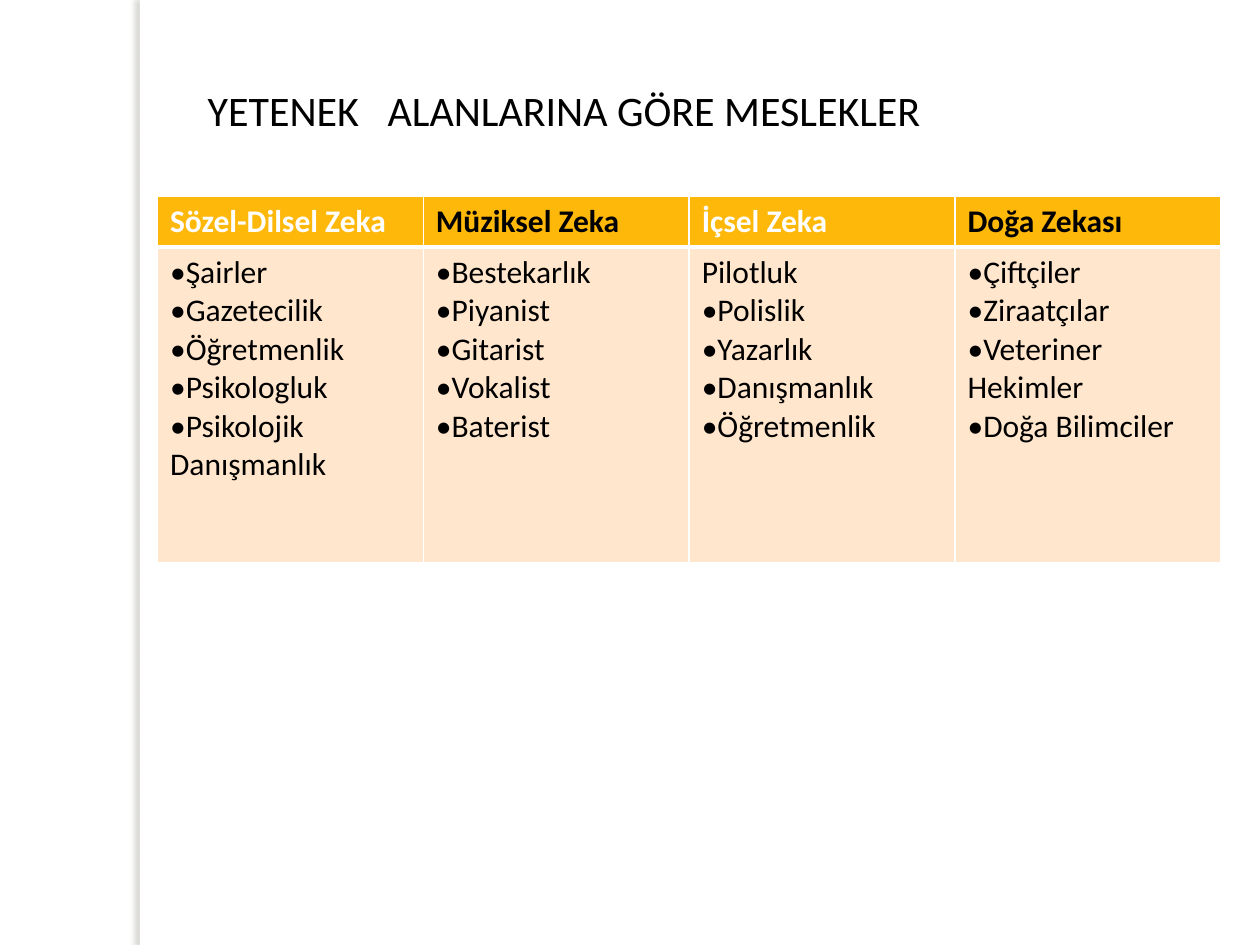
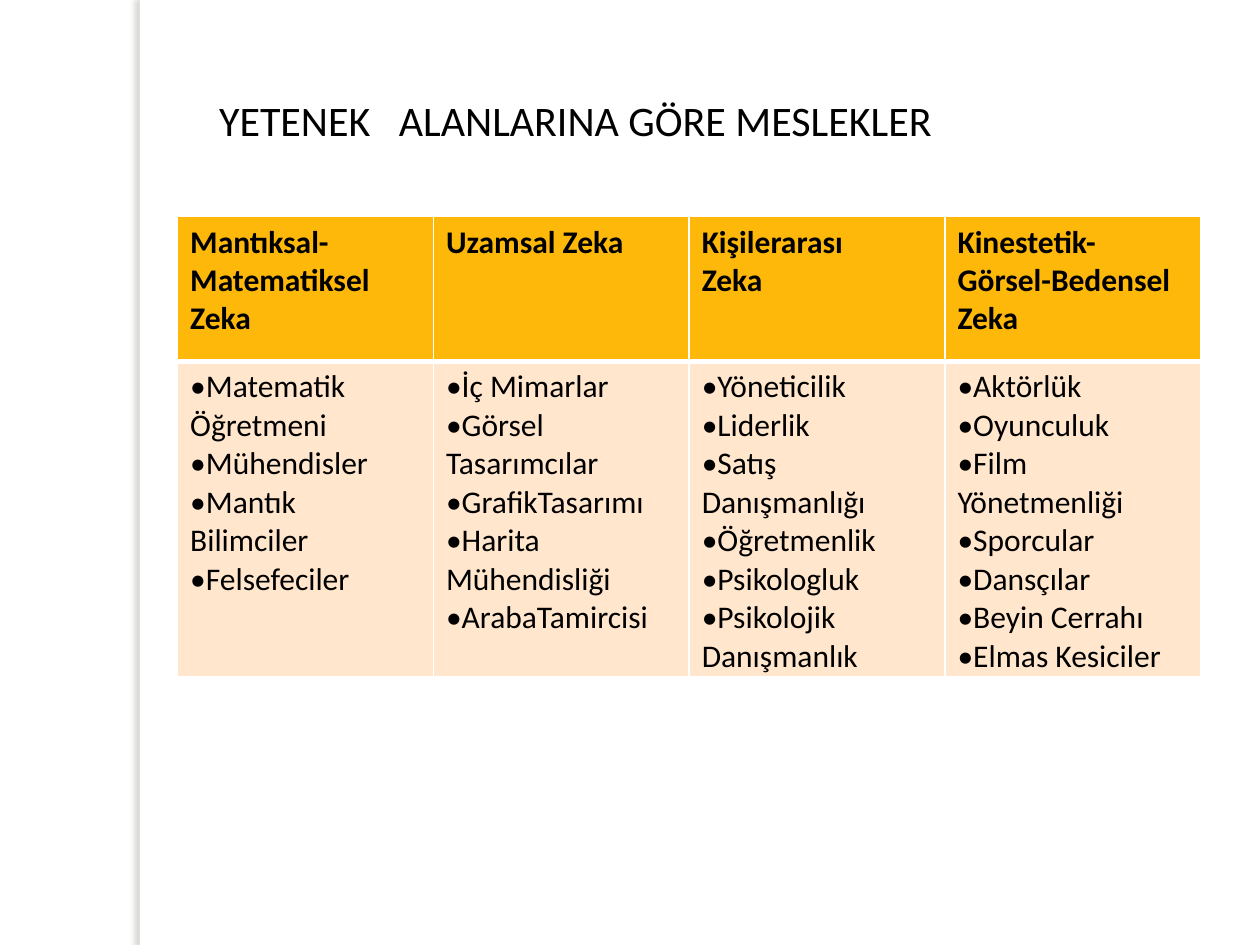
from dataclasses import dataclass

from lxml import etree
from pptx import Presentation
from pptx.dml.color import RGBColor
from pptx.enum.shapes import MSO_SHAPE
from pptx.oxml.ns import qn
from pptx.util import Inches, Pt

RECTANGLE = MSO_SHAPE.RECTANGLE


@dataclass(frozen=True)
class Theme:
    font: str = "Calibri"
    title_size: int = 24
    table_size: int = 18
    title_gap: float = 10.85
    black: str = "000000"
    white: str = "FFFFFF"
    header: str = "FEB80A"
    body: str = "FFE6CC"
    shadow: str = "736F63"
    thin: int = 1
    thick: int = 3


THEME = Theme()
TITLE_START, TITLE_END = "YETENEK", "ALANLARINA GÖRE MESLEKLER"

PAGES = [
    {
        "title_at": (1.55, 0.62, 7.31, 0.5),
        "table_at": (1.25, 1.56),
        "column_width": 2.11,
        "row_heights": (0.38, 2.51),
        "columns": [
            (["Sözel-Dilsel Zeka"], THEME.white,
             ["•Şairler", "•Gazetecilik", "•Öğretmenlik", "•Psikologluk",
              "•Psikolojik Danışmanlık"]),
            (["Müziksel Zeka"], THEME.black,
             ["•Bestekarlık", "•Piyanist", "•Gitarist", "•Vokalist", "•Baterist"]),
            (["İçsel Zeka"], THEME.white,
             ["Pilotluk", "•Polislik", "•Yazarlık", "•Danışmanlık", "•Öğretmenlik"]),
            (["Doğa Zekası"], THEME.black,
             ["•Çiftçiler", "•Ziraatçılar", "•Veteriner Hekimler",
              "•Doğa Bilimciler"]),
        ],
    },
    {
        "title_at": (1.64, 0.7, 7.31, 0.5),
        "table_at": (1.41, 1.72),
        "column_width": 2.03,
        "row_heights": (1.15, 2.5),
        "columns": [
            (["Mantıksal-Matematiksel Zeka"], THEME.black,
             ["•Matematik Öğretmeni", "•Mühendisler", "•Mantık Bilimciler",
              "•Felsefeciler"]),
            (["Uzamsal Zeka"], THEME.black,
             ["•İç Mimarlar", "•Görsel Tasarımcılar", "•GrafikTasarımı",
              "•Harita Mühendisliği", "•ArabaTamircisi"]),
            (["Kişilerarası", "Zeka"], THEME.black,
             ["•Yöneticilik", "•Liderlik", "•Satış Danışmanlığı", "•Öğretmenlik",
              "•Psikologluk", "•Psikolojik Danışmanlık"]),
            (["Kinestetik-Görsel-Bedensel Zeka"], THEME.black,
             ["•Aktörlük", "•Oyunculuk", "•Film Yönetmenliği", "•Sporcular",
              "•Dansçılar", "•Beyin Cerrahı", "•Elmas Kesiciler"]),
        ],
    },
]


def paint(fill, color):
    fill.solid()
    fill.fore_color.rgb = RGBColor.from_string(color)


def add_span(para, text, size, color, bold=False):
    span = para.add_run()
    span.text = text
    for name, value in {"name": THEME.font, "size": Pt(size), "bold": bold}.items():
        setattr(span.font, name, value)
    span.font.color.rgb = RGBColor.from_string(color)
    return span


def add_side_band(page):
    band = page.shapes.add_shape(
        RECTANGLE, Inches(1.11), 0, Inches(0.08), Inches(7.5))
    paint(band.fill, THEME.white)
    band.line.fill.background()
    band.shadow.inherit = False
    effects = band._element.spPr.find(qn("a:effectLst"))
    shadow = etree.SubElement(
        effects, qn("a:outerShdw"), blurRad=str(Pt(3)), dist=str(Pt(3)),
        dir=str(180 * 60000), algn="tl", rotWithShape="0")
    color = etree.SubElement(shadow, qn("a:srgbClr"), val=THEME.shadow)
    etree.SubElement(color, qn("a:alpha"), val="25000")


def add_title(page, position):
    box = page.shapes.add_textbox(*map(Inches, position))
    box.text_frame.word_wrap = False
    para = box.text_frame.paragraphs[0]
    for text, spacing in [(TITLE_START, 0), (" ", THEME.title_gap), (TITLE_END, 0)]:
        span = add_span(para, text, THEME.title_size, THEME.black)
        if spacing:
            span.font._element.set("spc", str(round(spacing * 100)))


def add_borders(cell, widths):
    properties = cell._tc.get_or_add_tcPr()
    for side, width in widths.items():
        line = etree.SubElement(properties, qn("a:ln" + side), w=str(Pt(width)))
        fill = etree.SubElement(line, qn("a:solidFill"))
        etree.SubElement(fill, qn("a:srgbClr"), val=THEME.white)


def fill_cell(cell, lines, color, is_header):
    thin, thick = THEME.thin, THEME.thick
    top, bottom = (thin, thick) if is_header else (thick, thin)
    add_borders(cell, {"L": thin, "R": thin, "T": top, "B": bottom})
    paint(cell.fill, THEME.header if is_header else THEME.body)
    for index, text in enumerate(lines):
        frame = cell.text_frame
        para = frame.add_paragraph() if index else frame.paragraphs[0]
        add_span(para, text, THEME.table_size, color, is_header)


def add_job_table(page, content):
    columns, heights = content["columns"], content["row_heights"]
    width = content["column_width"]
    left, top = content["table_at"]
    table = page.shapes.add_table(
        len(heights), len(columns), Inches(left), Inches(top),
        Inches(width * len(columns)), Inches(sum(heights))).table
    table.first_row = table.horz_banding = False
    for row, height in zip(table.rows, heights):
        row.height = Inches(height)
    for index, (heading, heading_color, jobs) in enumerate(columns):
        table.columns[index].width = Inches(width)
        fill_cell(table.cell(0, index), heading, heading_color, True)
        fill_cell(table.cell(1, index), jobs, THEME.black, False)


def main():
    deck = Presentation()
    deck.slide_width, deck.slide_height = Inches(10), Inches(7.5)
    for content in PAGES:
        page = deck.slides.add_slide(deck.slide_layouts[6])
        paint(page.background.fill, THEME.white)
        add_side_band(page)
        add_title(page, content["title_at"])
        add_job_table(page, content)
    deck.save("out.pptx")


if __name__ == "__main__":
    main()
